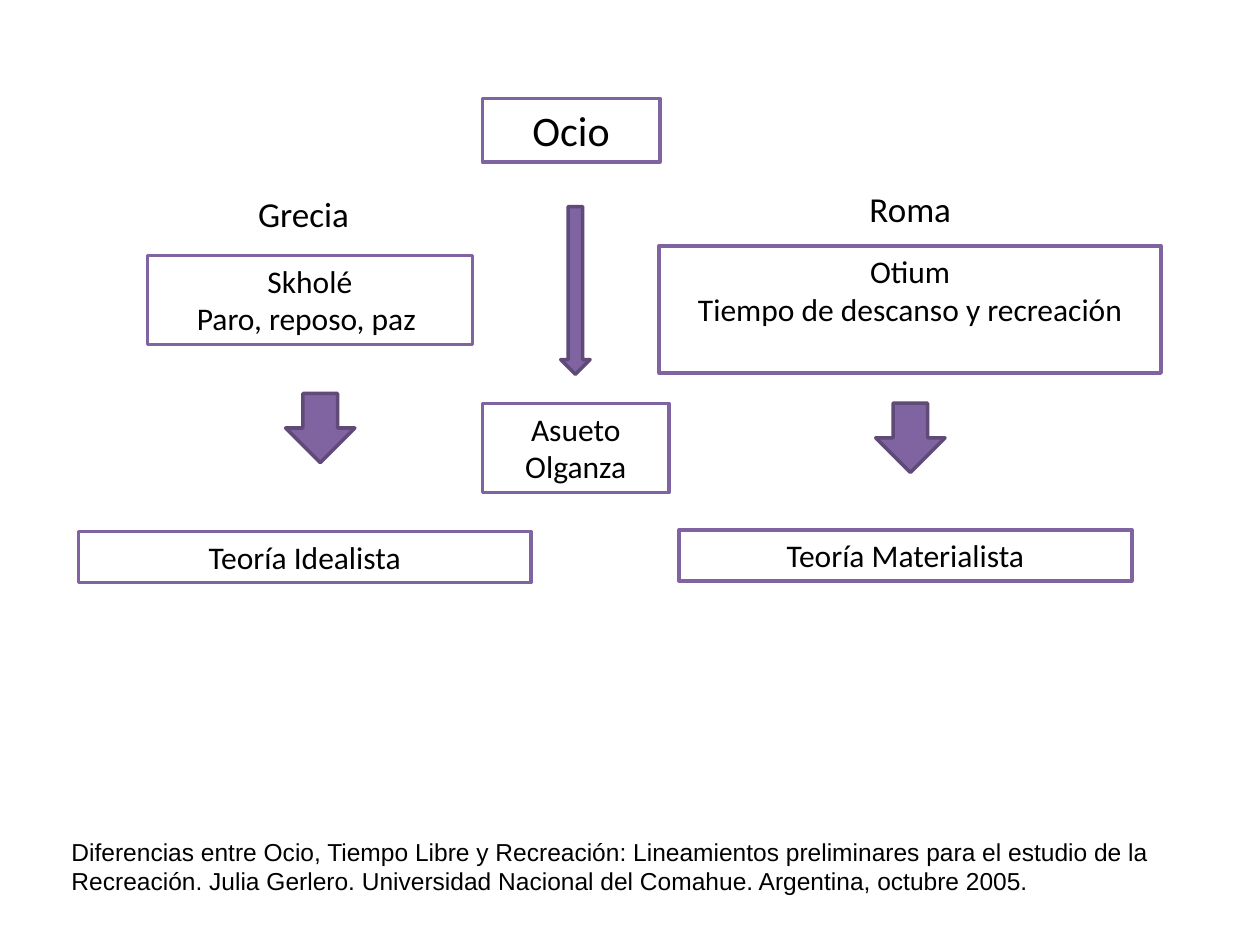
from pptx import Presentation
from pptx.dml.color import RGBColor
from pptx.enum.shapes import MSO_SHAPE
from pptx.enum.text import MSO_ANCHOR, PP_ALIGN
from pptx.util import Pt

HUES = {"ink": "000000", "paper": "FFFFFF", "plum": "8064A2", "dark": "5F4A78"}


class Board:
    def __init__(self, slide, font="Calibri", size=18, line=2):
        self.slide = slide
        self.font = font
        self.size = size
        self.line = line

    def hue(self, name):
        return RGBColor.from_string(HUES[name])

    def letter(self, shape, lines, size, font, align, anchor):
        frame = shape.text_frame
        frame.word_wrap = True
        frame.vertical_anchor = anchor
        for i, text in enumerate(lines):
            para = frame.add_paragraph() if i else frame.paragraphs[0]
            para.alignment = align
            run = para.add_run()
            run.text = text
            run.font.size = Pt(size or self.size)
            run.font.name = font or self.font
            run.font.color.rgb = self.hue("ink")

    def shape(self, kind, spot, fill, edge):
        shape = self.slide.shapes.add_shape(kind, *map(Pt, spot))
        shape.shadow.inherit = False
        shape.fill.solid()
        shape.fill.fore_color.rgb = self.hue(fill)
        shape.line.color.rgb = self.hue(edge)
        shape.line.width = Pt(self.line)
        return shape

    def box(self, spot, *lines, size=None):
        shape = self.shape(MSO_SHAPE.RECTANGLE, spot, "paper", "plum")
        self.letter(shape, lines, size, None, PP_ALIGN.CENTER, MSO_ANCHOR.TOP)

    def arrow(self, *spot):
        self.shape(MSO_SHAPE.DOWN_ARROW, spot, "plum", "dark")

    def label(self, spot, text, size, font=None, align=PP_ALIGN.LEFT,
              anchor=MSO_ANCHOR.TOP):
        shape = self.slide.shapes.add_textbox(*map(Pt, spot))
        self.letter(shape, [text], size, font, align, anchor)


def main():
    deck = Presentation()
    deck.slide_width, deck.slide_height = Pt(720), Pt(540)
    board = Board(deck.slides.add_slide(deck.slide_layouts[6]))

    board.box((275.6, 56.2, 101.5, 36.3), "Ocio", size=24)
    board.arrow(320.4, 118.1, 16.8, 95.8)
    board.box((275.6, 230.6, 106.8, 50.9), "Asueto", "Olganza")

    board.label((140.4, 106.6, 140.4, 31.5), "Grecia", 20)
    board.box((84.2, 146, 185.8, 50.9), "Skholé", "Paro, reposo, paz ")
    board.arrow(163.2, 224.8, 39.6, 39.6)
    board.box((44.8, 303.7, 258.8, 29.1), "Teoría Idealista")

    board.label((444.2, 103.5, 151.9, 31.5), "Roma", 20, align=PP_ALIGN.CENTER)
    board.box((376.7, 140.5, 286.8, 72.7), "Otium",
              "Tiempo de descanso y recreación")
    board.arrow(500.4, 230.4, 39.6, 39.6)
    board.box((388, 302.8, 258.8, 29.1), "Teoría Materialista")

    board.label((33.8, 474.5, 652.3, 41.2),
                "Diferencias entre Ocio, Tiempo Libre y Recreación: "
                "Lineamientos preliminares para el estudio de la Recreación. "
                "Julia Gerlero. Universidad Nacional del Comahue. "
                "Argentina, octubre 2005.",
                14, "Arial", anchor=MSO_ANCHOR.MIDDLE)
    deck.save("out.pptx")


if __name__ == "__main__":
    main()
